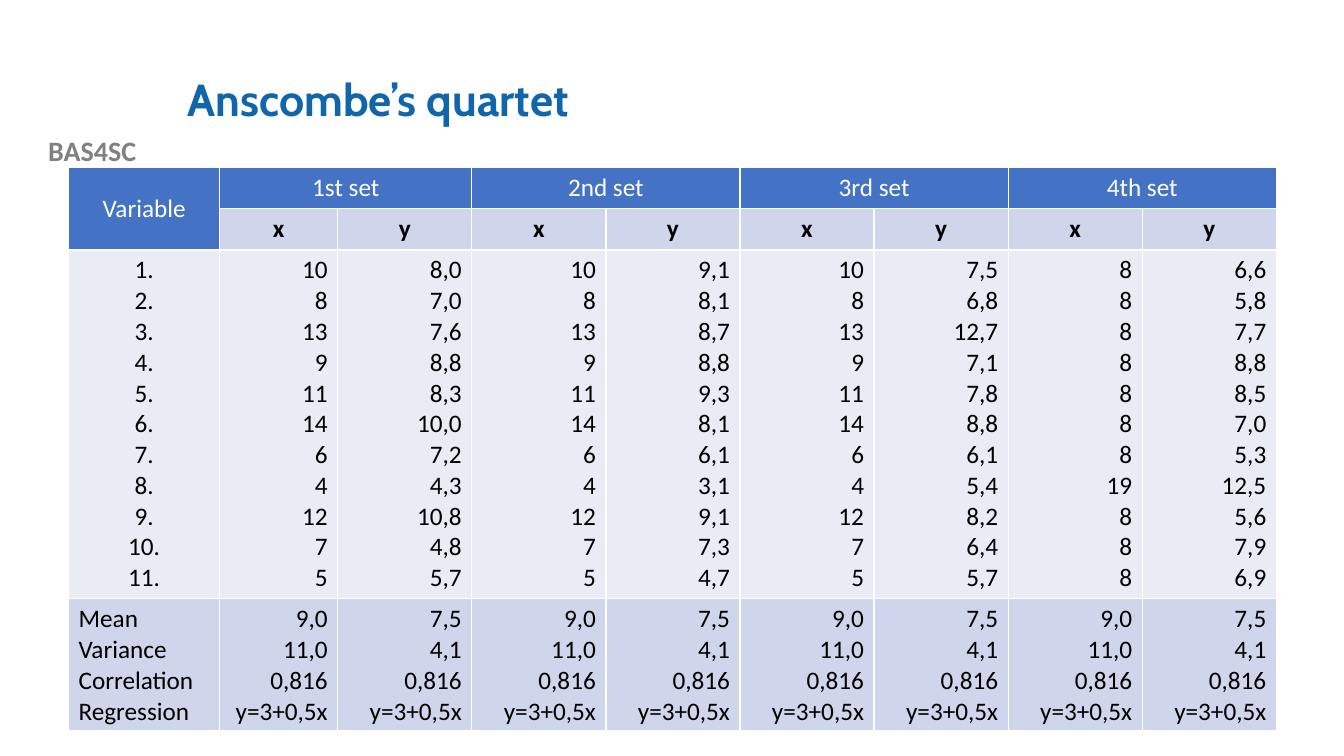
from lxml import etree
from pptx import Presentation
from pptx.dml.color import RGBColor
from pptx.enum.text import MSO_ANCHOR as ANCHOR, MSO_AUTO_SIZE as AUTO, PP_ALIGN as AL
from pptx.oxml.ns import qn
from pptx.util import Pt

PX = 9144
WHITE, BLACK, BLUE = "FFFFFF", "000000", "4472C4"
BAND, PALE = "CFD5EA", "E9EBF5"
COLS = [150, 117] + [133] * 7
ROWS = [41, 41, 346, 131]
SETS = ["1st set", "2nd set", "3rd set", "4th set"]
X = "10 8 13 9 11 14 6 4 12 7 5"
DATA = [
    X, "8,0 7,0 7,6 8,8 8,3 10,0 7,2 4,3 10,8 4,8 5,7",
    X, "9,1 8,1 8,7 8,8 9,3 8,1 6,1 3,1 9,1 7,3 4,7",
    X, "7,5 6,8 12,7 7,1 7,8 8,8 6,1 5,4 8,2 6,4 5,7",
    "8 8 8 8 8 8 8 19 8 8 8", "6,6 5,8 7,7 8,8 8,5 7,0 5,3 12,5 5,6 7,9 6,9",
]
STATS = ["9,0 11,0 0,816 y=3+0,5x", "7,5 4,1 0,816 y=3+0,5x"]


def px(n):
    return n * PX


def rgb(color):
    return RGBColor.from_string(color)


def write(tf, lines, size, color, bold=False, align=AL.LEFT, font="Calibri"):
    for i, line in enumerate(lines):
        p = tf.paragraphs[0] if i == 0 else tf.add_paragraph()
        p.text = line
        p.alignment = align
        p.font.name, p.font.size, p.font.bold = font, Pt(size), bold
        p.font.color.rgb = rgb(color)


def add_borders(cell):
    tcPr = cell._tc.get_or_add_tcPr()
    for side in "LRTB":
        ln = etree.SubElement(tcPr, qn(f"a:ln{side}"), w=str(Pt(1)))
        fill = etree.SubElement(ln, qn("a:solidFill"))
        etree.SubElement(fill, qn("a:srgbClr"), val=WHITE)


def fill_cell(cell, lines, fill, align=AL.CENTER, color=BLACK, bold=False):
    write(cell.text_frame, lines, 18, color, bold, align)
    add_borders(cell)
    cell.fill.solid()
    cell.fill.fore_color.rgb = rgb(fill)


def add_label(s):
    sp = s.shapes.add_textbox(px(0), px(128), px(183), px(44))
    tf = sp.text_frame
    tf.word_wrap = True
    write(tf, ["BAS4SC"], 20, "808080", True, AL.CENTER)


def format_title(s):
    sp = s.shapes.title
    sp.left, sp.top, sp.width, sp.height = px(176), px(40), px(1066), px(122)
    tf = sp.text_frame
    tf.vertical_anchor = ANCHOR.MIDDLE
    tf.auto_size = AUTO.NONE
    write(tf, ["Anscombe’s quartet"], 32, "1065AB", True, font="Cabin")
    tf.paragraphs[0].line_spacing = 0.9


def add_quartet(s):
    frame = s.shapes.add_table(len(ROWS), len(COLS), px(68), px(166),
                               px(sum(COLS)), px(sum(ROWS)))
    table = frame.table
    table.first_row = table.horz_banding = False
    for col, width in zip(table.columns, COLS):
        col.width = px(width)
    for row, height in zip(table.rows, ROWS):
        row.height = px(height)

    variable = table.cell(0, 0)
    variable.merge(table.cell(1, 0))
    variable.vertical_anchor = ANCHOR.MIDDLE
    fill_cell(variable, ["Variable"], BLUE, color=WHITE)
    for i, name in enumerate(SETS):
        head = table.cell(0, 2 * i + 1)
        head.merge(table.cell(0, 2 * i + 2))
        fill_cell(head, [name], BLUE, color=WHITE)

    fill_cell(table.cell(2, 0), [f"{n}." for n in range(1, 12)], PALE)
    fill_cell(table.cell(3, 0), ["Mean", "Variance", "Correlation", "Regression"],
              BAND, AL.LEFT)
    for i, values in enumerate(DATA):
        fill_cell(table.cell(1, i + 1), ["xy"[i % 2]], BAND, bold=True)
        fill_cell(table.cell(2, i + 1), values.split(), PALE, AL.RIGHT)
        fill_cell(table.cell(3, i + 1), STATS[i % 2].split(), BAND, AL.RIGHT)


def main():
    prs = Presentation()
    prs.slide_width, prs.slide_height = px(1333), px(750)
    s = prs.slides.add_slide(prs.slide_layouts[5])
    add_label(s)
    format_title(s)
    add_quartet(s)
    prs.save("out.pptx")


if __name__ == "__main__":
    main()
